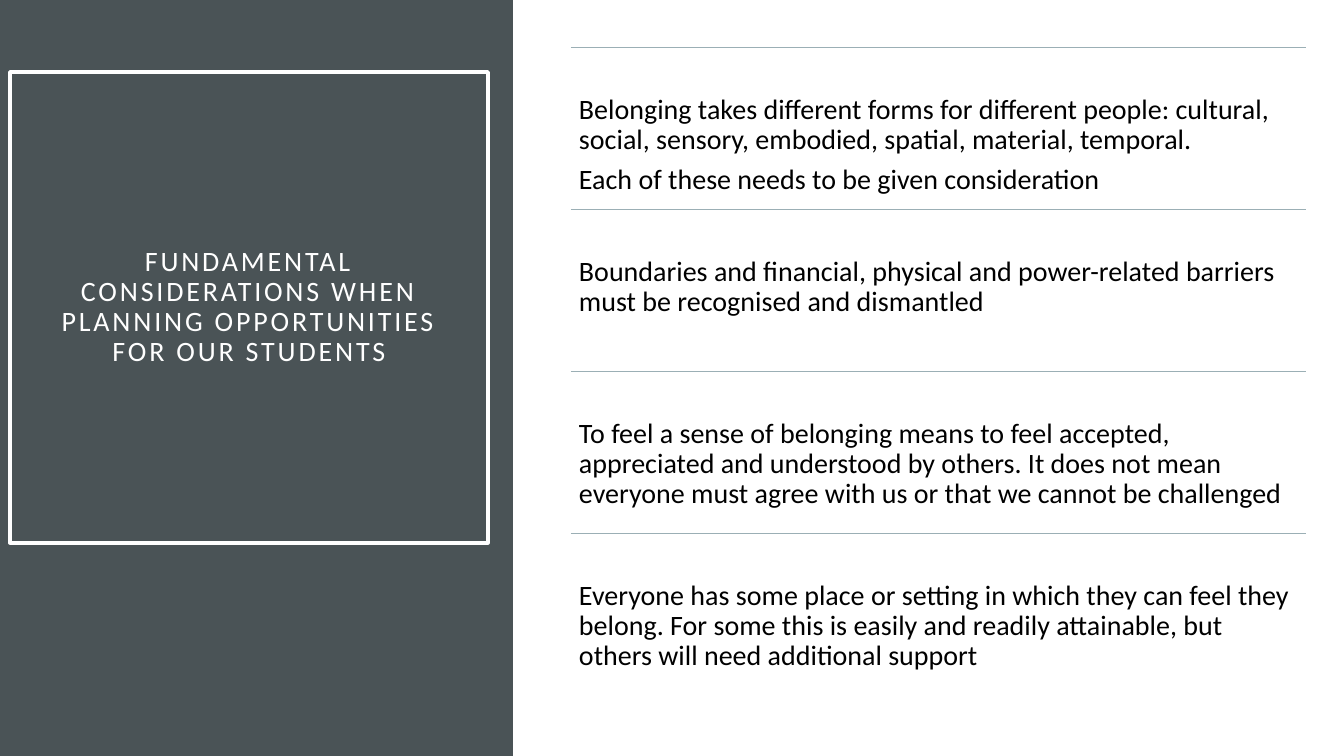
from pptx import Presentation
from pptx.dml.color import RGBColor
from pptx.enum.shapes import MSO_CONNECTOR, MSO_SHAPE
from pptx.enum.text import MSO_ANCHOR, PP_ALIGN
from pptx.oxml.ns import qn
from pptx.util import Pt
from lxml.etree import SubElement

PX = 9144000 / 1008  # EMU in one px
THEME = {
    "panel": RGBColor.from_string("4A5356"),
    "white": RGBColor.from_string("FFFFFF"),
    "rule": RGBColor.from_string("9BAFB5"),
    "ink": RGBColor.from_string("000000"),
    "font": "Calibri",
    "size": Pt(20),
}


def px(*nums):
    return [round(n * PX) for n in nums]


def write(frame, lines, color, pads, anchor, align):
    frame.word_wrap = True
    frame.vertical_anchor = anchor
    sides = ("left", "top", "right", "bottom")
    for side, pad in zip(sides, px(*pads)):
        setattr(frame, f"margin_{side}", pad)
    for i, line in enumerate(lines):
        para = frame.add_paragraph() if i else frame.paragraphs[0]
        para.alignment = align
        para.line_spacing = 0.9
        para.space_after = Pt(7) if i < len(lines) - 1 else Pt(0)
        run = para.add_run()
        run.text = line
        style = {"name": THEME["font"], "size": THEME["size"]}
        for key, value in style.items():
            setattr(run.font, key, value)
        run.font.color.rgb = color


deck = Presentation()
deck.slide_width, deck.slide_height = px(1344, 756)
slide = deck.slides.add_slide(deck.slide_layouts[6])
shapes = slide.shapes

# Dark side panel
panel = shapes.add_shape(MSO_SHAPE.RECTANGLE, *px(0, 0, 513, 756))
panel.shadow.inherit = False
panel.fill.solid()
panel.fill.fore_color.rgb = THEME["panel"]
panel.line.fill.background()

# Framed title
title = shapes.add_shape(MSO_SHAPE.RECTANGLE, *px(10, 72, 478, 471))
title.shadow.inherit = False
title.fill.background()
title.line.color.rgb = THEME["white"]
title.line.width = Pt(2.5)
write(title.text_frame,
      ["FUNDAMENTAL CONSIDERATIONS WHEN PLANNING OPPORTUNITIES FOR OUR STUDENTS"],
      THEME["white"], (40, 20, 40, 20), MSO_ANCHOR.MIDDLE, PP_ALIGN.CENTER)
for run in title.text_frame.paragraphs[0].runs:
    run.font._element.set("spc", "200")

# Considerations, each under a thin rule
POINTS = [
    ["Belonging takes different forms for different people: cultural, social, "
     "sensory, embodied, spatial, material, temporal.",
     "Each of these needs to be given consideration"],
    ["Boundaries and financial, physical and power-related barriers "
     "must be recognised and dismantled"],
    ["To feel a sense of belonging means to feel accepted, appreciated "
     "and understood by others. It does not mean everyone must agree "
     "with us or that we cannot be challenged"],
    ["Everyone has some place or setting in which they can feel they belong. "
     "For some this is easily and readily attainable, "
     "but others will need additional support"],
]
LEFT, TOP, WIDTH, STEP = 571, 47, 735, 162

for row, lines in enumerate(POINTS):
    y = TOP + row * STEP
    rule = shapes.add_connector(MSO_CONNECTOR.STRAIGHT,
                                *px(LEFT, y, LEFT + WIDTH, y))
    rule.line.color.rgb = THEME["rule"]
    rule.line.width = Pt(0.5)
    SubElement(rule._element.spPr, qn("a:effectLst"))
    box = shapes.add_textbox(*px(LEFT, y, WIDTH, STEP))
    write(box.text_frame, lines, THEME["ink"], (8, 48, 8, 8),
          MSO_ANCHOR.TOP, PP_ALIGN.LEFT)

deck.save("out.pptx")
